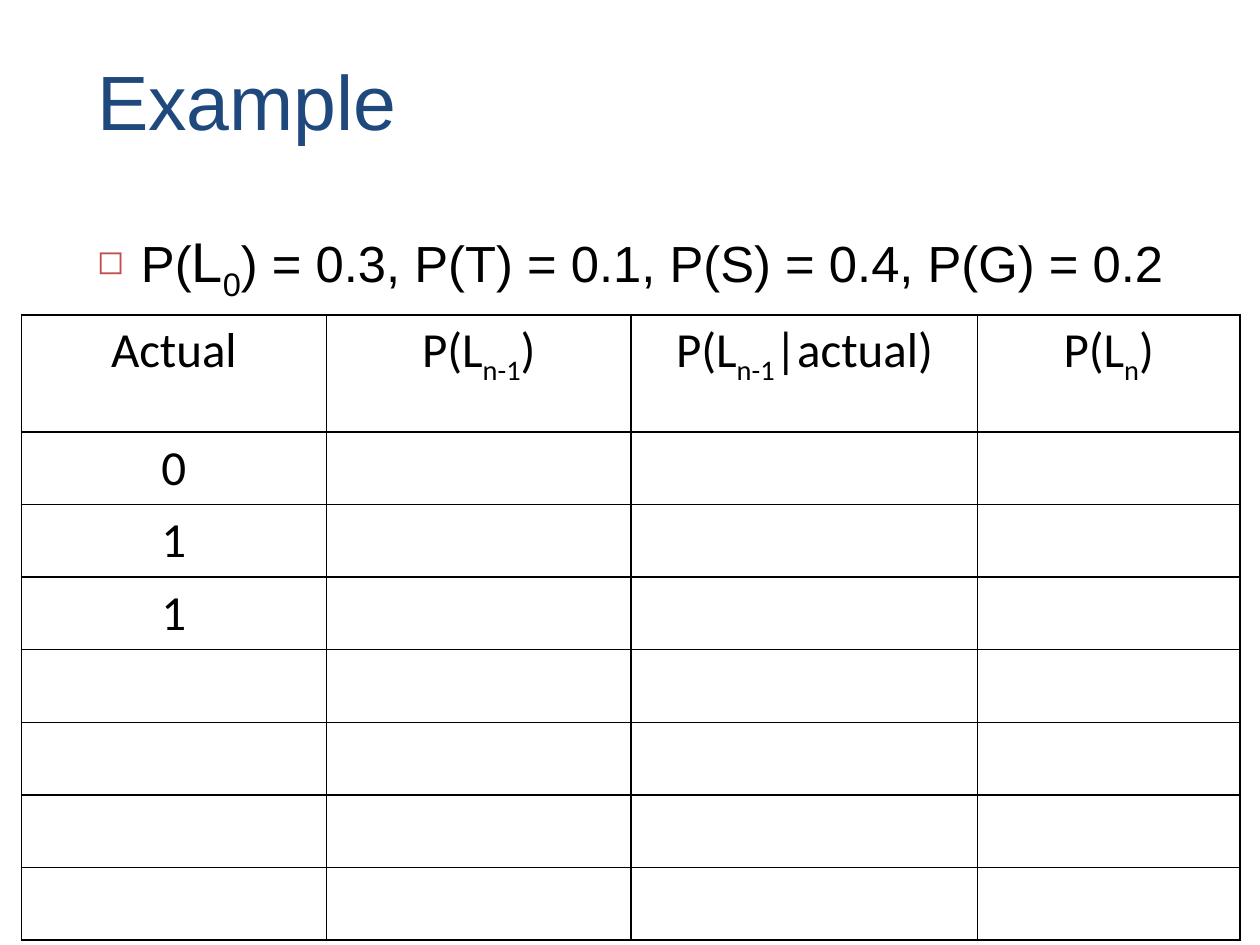
"""Build the Example slide with a title, one bullet and a probability table."""
import dataclasses
import typing

import pptx
import pptx.dml.color
import pptx.enum.text
import pptx.oxml
import pptx.oxml.ns
import pptx.util

Inches = pptx.util.Inches
Pt = pptx.util.Pt
Align = pptx.enum.text.PP_ALIGN
Anchor = pptx.enum.text.MSO_ANCHOR

NAVY = pptx.dml.color.RGBColor(0x1F, 0x49, 0x7D)
RED = pptx.dml.color.RGBColor(0xC0, 0x50, 0x4D)
BLACK = pptx.dml.color.RGBColor(0, 0, 0)
NS = pptx.oxml.ns.nsdecls("a")


@dataclasses.dataclass(frozen=True)
class Run:
    """Text of one format."""
    text: str
    size: float = 28
    font: str = "Calibri"
    color: pptx.dml.color.RGBColor = BLACK
    sub: bool = False


HEAD = (
    (Run("Actual"),),
    (Run("P(L"), Run("n-1", sub=True), Run(")")),
    (Run("P(L"), Run("n-1", sub=True), Run("|actual)")),
    (Run("P(L"), Run("n", sub=True), Run(")")),
)
ACTUAL = ("0", "1", "1")
WIDTHS = (2.42, 2.42, 2.75, 2.08)
ROWS = 7
TOP = 0.93
BODY = 4.03


def write(para: typing.Any, runs: typing.Iterable[Run]) -> None:
    """Add runs to a paragraph."""
    for item in runs:
        run = para.add_run()
        run.text = item.text
        run.font.size = Pt(item.size)
        run.font.name = item.font
        run.font.color.rgb = item.color
        if item.sub:
            run.font._element.set("baseline", "-25000")


def place(shape: typing.Any, left: float, top: float, width: float, height: float) -> None:
    """Set the place and size of a shape."""
    shape.left, shape.top = Inches(left), Inches(top)
    shape.width, shape.height = Inches(width), Inches(height)


def add_title(slide: typing.Any) -> None:
    """Fill the title."""
    title = slide.shapes.title
    place(title, 0.67, 0.25, 8.92, 1.08)
    title.text_frame.vertical_anchor = Anchor.MIDDLE
    para = title.text_frame.paragraphs[0]
    para.alignment = Align.LEFT
    write(para, [Run("Example", 44, "Arial", NAVY)])


def add_bullet(slide: typing.Any) -> None:
    """Add the line of given odds."""
    box = slide.shapes.add_textbox(Inches(0.67), Inches(1.75), Inches(8.92), Inches(4.92))
    box.text_frame.word_wrap = True
    para = box.text_frame.paragraphs[0]
    para.space_before = Pt(3)
    write(para, [
        Run("P(", 29, "Arial"),
        Run("L", 32, "Arial"),
        Run("0", 32, "Arial", sub=True),
        Run(") = 0.3, P(T) = 0.1, P(S) = 0.4, P(G) = 0.2", 29, "Arial"),
    ])
    props = para._p.get_or_add_pPr()
    props.set("marL", str(Inches(0.35)))
    props.set("indent", str(Inches(-0.35)))
    for xml in (
        f'<a:buClr {NS}><a:srgbClr val="{RED}"/></a:buClr>',
        f'<a:buSzPct {NS} val="66000"/>',
        f'<a:buChar {NS} char="◻"/>',
    ):
        props.append(pptx.oxml.parse_xml(xml))


def frame(cell: typing.Any) -> None:
    """Clear the fill of a cell and rule its four sides."""
    cell.fill.background()
    props = cell._tc.get_or_add_tcPr()
    for spot, side in enumerate(("lnL", "lnR", "lnT", "lnB")):
        props.insert(spot, pptx.oxml.parse_xml(
            f'<a:{side} {NS} w="{Pt(1)}"><a:solidFill>'
            f'<a:srgbClr val="{BLACK}"/></a:solidFill></a:{side}>'))


def add_grid(slide: typing.Any) -> None:
    """Add the table of odds."""
    table = slide.shapes.add_table(
        ROWS + 1, len(WIDTHS), Inches(0.17), Inches(2.5),
        Inches(sum(WIDTHS)), Inches(TOP + BODY)).table
    table.first_row = table.horz_banding = False
    for col, width in zip(table.columns, WIDTHS):
        col.width = Inches(width)
    for num, row in enumerate(table.rows):
        row.height = Inches(BODY / ROWS if num else TOP)
    for cell in table.iter_cells():
        frame(cell)
        cell.text_frame.paragraphs[0].alignment = Align.CENTER
    for col, runs in enumerate(HEAD):
        write(table.cell(0, col).text_frame.paragraphs[0], runs)
    for row, text in enumerate(ACTUAL, 1):
        write(table.cell(row, 0).text_frame.paragraphs[0], [Run(text)])


def main() -> None:
    """Build and save the deck."""
    deck = pptx.Presentation()
    deck.slide_width, deck.slide_height = Inches(10), Inches(7.5)
    slide = deck.slides.add_slide(deck.slide_layouts[5])
    add_title(slide)
    add_bullet(slide)
    add_grid(slide)
    deck.save("out.pptx")


if __name__ == "__main__":
    main()
